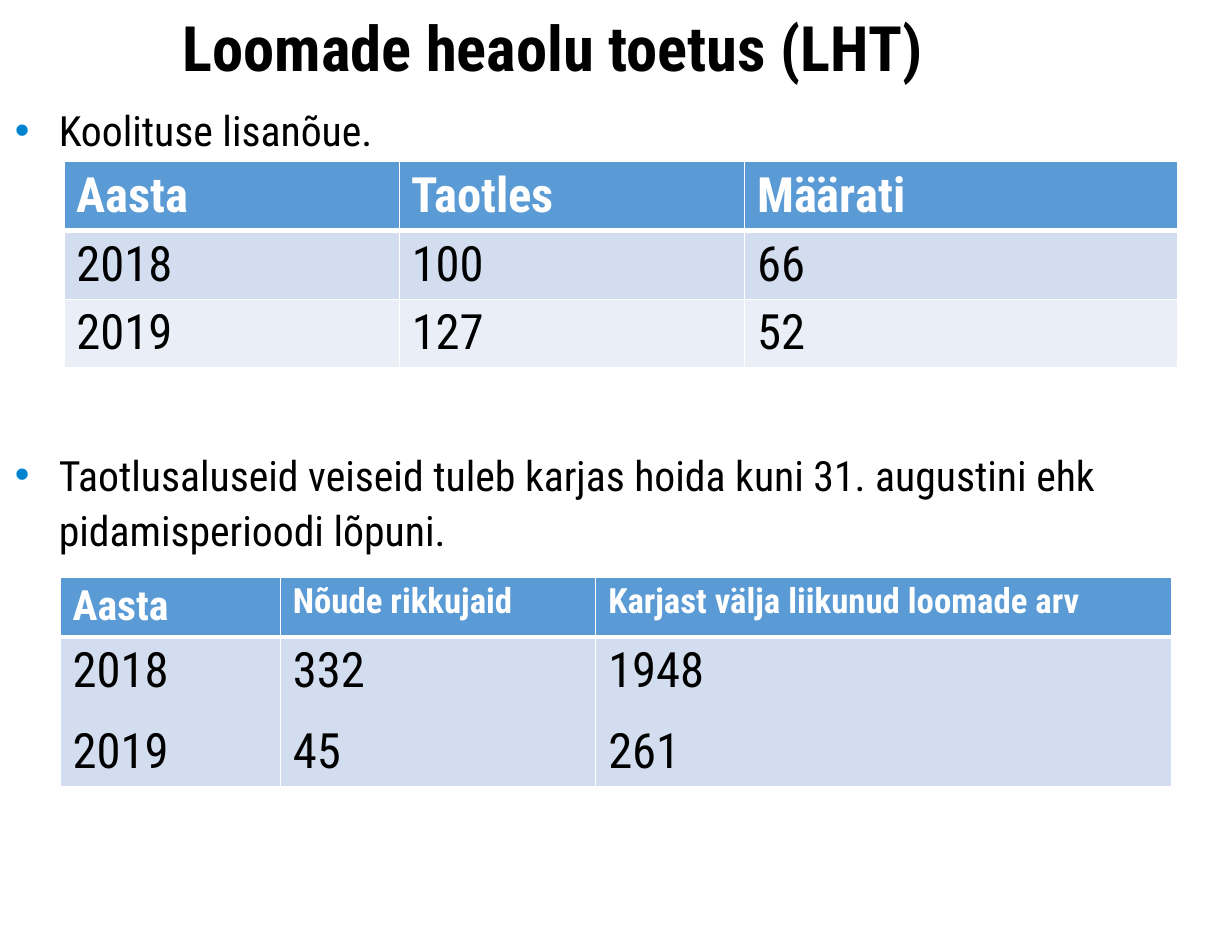
"""Build the slide on animal welfare support with its two yearly tables."""
from dataclasses import dataclass

from lxml import etree
from pptx import Presentation
from pptx.dml.color import RGBColor
from pptx.enum.text import MSO_ANCHOR, MSO_AUTO_SIZE, PP_ALIGN
from pptx.oxml.ns import qn
from pptx.util import Inches, Pt

FONT = "Roboto Condensed"
BLACK = RGBColor(0x00, 0x00, 0x00)
WHITE = RGBColor(0xFF, 0xFF, 0xFF)
HEADER_BLUE = RGBColor(0x5B, 0x9B, 0xD5)
BAND_DARK = RGBColor(0xD2, 0xDE, 0xEF)
BAND_LIGHT = RGBColor(0xEA, 0xEF, 0xF7)
BULLET_BLUE = RGBColor(0x00, 0x84, 0xD1)
TOP = MSO_ANCHOR.TOP
LEFT = PP_ALIGN.LEFT
NO_AUTOFIT = MSO_AUTO_SIZE.NONE
TITLE_ONLY = 5
CM_PER_INCH = 2.54
SLIDE_WIDTH = Inches(25 / CM_PER_INCH)
SLIDE_HEIGHT = Inches(19 / CM_PER_INCH)
LINE_SPACING = 1.1
THIN, THICK = 1, 3


@dataclass(frozen=True)
class YearTable:
    """Place, sizes and contents of one table; a cell holds a list of lines."""

    left: float
    top: float
    columns: list[float]
    rows: list[float]
    header_sizes: list[int]
    cells: list[list[list[str]]]


@dataclass(frozen=True)
class Bullet:
    """One bulleted statement and the space above it in points."""

    text: str
    space_before: float


TABLES = [
    YearTable(0.51, 1.29, [2.68, 2.76, 3.46], [0.55, 0.55, 0.55], [28, 28, 28], [
        [["Aasta"], ["Taotles"], ["Määrati"]],
        [["2018"], ["100"], ["66"]],
        [["2019"], ["127"], ["52"]],
    ]),
    YearTable(0.48, 4.61, [1.76, 2.52, 4.6], [0.48, 1.2], [24, 20, 20], [
        [["Aasta"], ["Nõude rikkujaid"], ["Karjast välja liikunud loomade arv"]],
        [["2018", "2019"], ["332", "45"], ["1948", "261"]],
    ]),
]
BULLETS = [
    Bullet("Koolituse lisanõue.", 0),
    Bullet("Taotlusaluseid veiseid tuleb karjas hoida kuni 31. augustini ehk "
           "pidamisperioodi lõpuni.", 158.5),
]


def add_run(paragraph, text: str, size: float, color: RGBColor, bold: bool = False) -> None:
    """Append a formatted run to a paragraph."""
    run = paragraph.add_run()
    run.text = text
    run.font.name = FONT
    run.font.size = Pt(size)
    run.font.bold = bold
    run.font.color.rgb = color


def set_margins(text_frame, top: float = 0) -> None:
    """Remove the frame's margins except the given top one."""
    text_frame.margin_left = text_frame.margin_right = text_frame.margin_bottom = 0
    text_frame.margin_top = Inches(top)
    text_frame.vertical_anchor = TOP
    text_frame.word_wrap = True
    text_frame.auto_size = NO_AUTOFIT


def add_title(slide) -> None:
    """Place and fill the title."""
    title = slide.shapes.title
    title.left, title.top = Inches(1.46), Inches(0.09)
    title.width, title.height = Inches(8.66), Inches(0.71)
    set_margins(title.text_frame, 0.06)
    paragraph = title.text_frame.paragraphs[0]
    paragraph.alignment = LEFT
    paragraph.line_spacing = 0.88
    add_run(paragraph, "Loomade heaolu toetus (LHT)", 36, BLACK, True)


def set_bullet(paragraph) -> None:
    """Give a paragraph a hanging blue bullet."""
    properties = paragraph._p.get_or_add_pPr()
    properties.set("marL", str(Inches(0.47)))
    properties.set("indent", str(Inches(-0.35)))
    color = etree.SubElement(properties, qn("a:buClr"))
    etree.SubElement(color, qn("a:srgbClr"), val=str(BULLET_BLUE))
    etree.SubElement(properties, qn("a:buFont"), typeface="Arial")
    etree.SubElement(properties, qn("a:buChar"), char="•")


def add_bullets(slide, bullets: list[Bullet]) -> None:
    """Add the bulleted statements that introduce the tables."""
    box = slide.shapes.add_textbox(0, Inches(0.8), SLIDE_WIDTH, Inches(6.68))
    text_frame = box.text_frame
    set_margins(text_frame)
    for index, bullet in enumerate(bullets):
        paragraph = text_frame.add_paragraph() if index else text_frame.paragraphs[0]
        paragraph.line_spacing = LINE_SPACING
        paragraph.space_before = Pt(bullet.space_before)
        paragraph.space_after = Pt(8)
        set_bullet(paragraph)
        add_run(paragraph, bullet.text, 24, BLACK)


def set_borders(cell, top: float, bottom: float) -> None:
    """Draw white borders around a cell."""
    properties = cell._tc.get_or_add_tcPr()
    widths = {"a:lnL": THIN, "a:lnR": THIN, "a:lnT": top, "a:lnB": bottom}
    for tag, width in widths.items():
        line = etree.SubElement(properties, qn(tag), w=str(Pt(width)))
        fill = etree.SubElement(line, qn("a:solidFill"))
        etree.SubElement(fill, qn("a:srgbClr"), val=str(WHITE))


def fill_cell(cell, lines: list[str], row: int, header_size: int) -> None:
    """Write and format one cell according to its row."""
    is_header = row == 0
    set_borders(cell, THICK if row == 1 else THIN, THICK if is_header else THIN)
    cell.fill.solid()
    band = BAND_DARK if row % 2 else BAND_LIGHT
    cell.fill.fore_color.rgb = HEADER_BLUE if is_header else band
    cell.vertical_anchor = TOP
    cell.margin_top = 0
    for index, line in enumerate(lines):
        text_frame = cell.text_frame
        paragraph = text_frame.add_paragraph() if index else text_frame.paragraphs[0]
        paragraph.line_spacing = LINE_SPACING
        paragraph.space_before = Pt(10.5 if index else 0)
        add_run(paragraph, line, header_size if is_header else 28,
                WHITE if is_header else BLACK, is_header)


def add_year_table(slide, year_table: YearTable) -> None:
    """Add one table with its sizes and contents."""
    frame = slide.shapes.add_table(
        len(year_table.rows), len(year_table.columns),
        Inches(year_table.left), Inches(year_table.top),
        Inches(sum(year_table.columns)), Inches(sum(year_table.rows)))
    table = frame.table
    for column, width in zip(table.columns, year_table.columns):
        column.width = Inches(width)
    for row, height in zip(table.rows, year_table.rows):
        row.height = Inches(height)
    for row_index, row_cells in enumerate(year_table.cells):
        for column_index, lines in enumerate(row_cells):
            fill_cell(table.cell(row_index, column_index), lines, row_index,
                      year_table.header_sizes[column_index])


def main() -> None:
    """Build and save the presentation."""
    presentation = Presentation()
    presentation.slide_width = SLIDE_WIDTH
    presentation.slide_height = SLIDE_HEIGHT
    slide = presentation.slides.add_slide(presentation.slide_layouts[TITLE_ONLY])
    add_title(slide)
    add_bullets(slide, BULLETS)
    for year_table in TABLES:
        add_year_table(slide, year_table)
    presentation.save("out.pptx")


if __name__ == "__main__":
    main()
